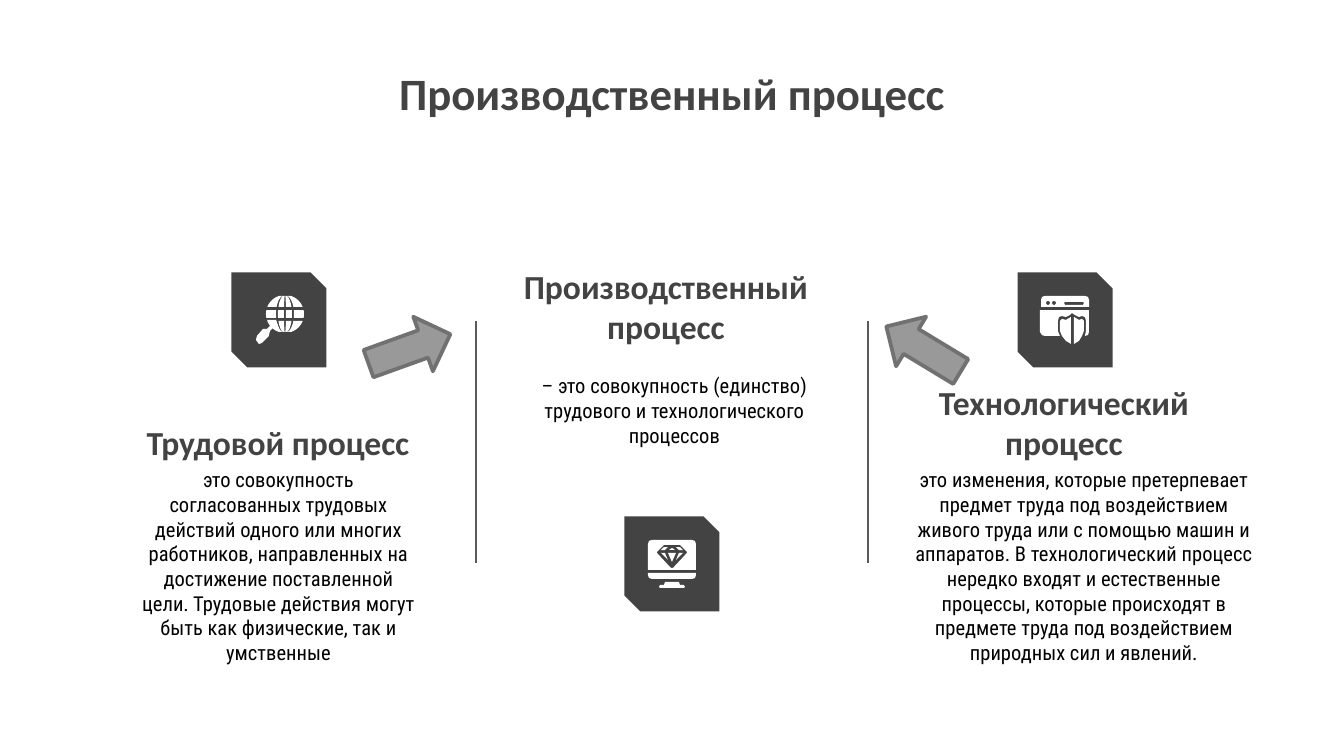
import math
from dataclasses import dataclass

import pptx
import pptx.dml.color
import pptx.enum.shapes
import pptx.enum.text
import pptx.util
from lxml import etree

SHAPE = pptx.enum.shapes.MSO_SHAPE
ANCHOR = pptx.enum.text.MSO_ANCHOR


@dataclass(frozen=True)
class Theme:
    dark: str = "434343"
    body: str = "000000"
    white: str = "FFFFFF"
    divider: str = "595959"
    arrow: str = "999999"
    arrow_edge: str = "717171"
    heading_font: str = "Calibri"
    body_font: str = "Roboto Condensed"
    title_size: int = 24
    heading_size: int = 18
    body_size: int = 11


THEME = Theme()

TITLE = "Производственный процесс"
TITLE_BOX = (289, 52, 766, 138)
HEADING_W, HEADING_H, BODY_H, TILE = 392, 63, 148, 95

# Heading and body positions are (left, top); tile positions are centres.
COLUMNS = [
    {
        "heading": "Трудовой процесс",
        "heading_at": (82, 413),
        "body": "это совокупность согласованных трудовых действий одного или многих "
                "работников, направленных на достижение поставленной цели. Трудовые "
                "действия могут быть как физические, так и умственные",
        "body_at": (128, 454), "body_w": 301,
        "tile_at": (279, 320), "icon": "globe",
    },
    {
        "heading": "Производственный процесс",
        "heading_at": (470, 297),
        "body": "– это совокупность (единство) трудового и технологического процессов",
        "body_at": (511, 360), "body_w": 327,
        "tile_at": (672, 564), "icon": "monitor",
    },
    {
        "heading": "Технологический процесс",
        "heading_at": (868, 413),
        "body": "это изменения, которые претерпевает предмет труда под воздействием "
                "живого труда или с помощью машин и аппаратов. В технологический процесс "
                "нередко входят и естественные процессы, которые происходят в предмете "
                "труда под воздействием природных сил и явлений.",
        "body_at": (902, 454), "body_w": 364,
        "tile_at": (1065, 320), "icon": "browser",
    },
]
DIVIDERS_X, DIVIDER_TOP, DIVIDER_BOTTOM = (476, 868), 321, 563
ARROWS = [((366, 320, 87, 58), 340.2), ((880, 320, 87, 58), 211.2)]


def mirrored(outline):
    return [(-x, y) for x, y in outline]


def circle(x, y, r):
    return [(x + r * math.cos(i * math.pi / 8), y + r * math.sin(i * math.pi / 8))
            for i in range(16)]


def globe_pieces(cx=6, cy=-6, radius=19):
    """Cells between meridians and parallels, as seen from the front."""
    def edge(half_width, ys):
        return [(cx + half_width * math.sqrt(1 - (y / radius) ** 2), cy + y) for y in ys]

    pieces = []
    for top, bottom in ((-18, -7), (-4, 4), (7, 18)):
        ys = [top + (bottom - top) * i / 8 for i in range(9)]
        for inner, outer in ((-19, -9), (-7, -1), (1, 7), (9, 19)):
            pieces.append([edge(inner, ys) + edge(outer, ys[::-1])])
    return pieces


# An icon is a list of pieces, a piece is an outline followed by its holes,
# all measured from the centre of the tile.
HANDLE = [(-12, 0), (-8, 5), (-12, 9), (-16, 9), (-22, 16), (-23, 20), (-20, 24),
          (-17, 23), (-10, 16), (-9, 11), (-6, 8), (1, 11), (-3, 0)]
GEM_SIDE = [[(-8, -17), (-11, -14), (-7, -14), (-4, -17)], [(-11, -11), (-4, -4), (-7, -11)]]
ICONS = {
    "globe": globe_pieces() + [[HANDLE]],
    "monitor": [
        [[(-20, -24), (20, -24), (23, -23), (24, -20), (24, 6), (-24, 6), (-24, -20), (-23, -23)],
         [(8, -19), (15, -12), (15, -11), (1, 4), (-1, 4), (-15, -11), (-15, -12), (-8, -19)]],
        [[(-24, 9), (24, 9), (24, 11), (23, 14), (20, 15), (-20, 15), (-23, 14), (-24, 11)]],
        [[(-7, 18), (-8, 21), (-12, 21), (-13, 23), (-12, 24), (12, 24), (13, 23), (12, 21),
          (8, 21), (7, 18)]],
        [[(0, -16), (-3, -14), (3, -14)]],
        [[(-4, -11), (0, -2), (4, -11)]],
    ] + [[side] for outline in GEM_SIDE for side in (outline, mirrored(outline))],
    "browser": [
        [[(-20, -24), (20, -24), (23, -23), (24, -20), (24, -13), (-24, -13), (-24, -20),
          (-23, -23)],
         circle(-17, -17, 2), circle(-11, -17, 2),
         [(0, -18), (18, -18), (19, -17), (18, -15), (0, -15), (-1, -17)]],
        [[(-25, -10), (-25, 12), (-23, 15), (-20, 16), (-5, 16), (-7, 11), (-7, 1), (-6, -3),
          (-3, -4), (1, -3), (5, -5), (7, -7), (10, -5), (14, -3), (17, -4), (20, -3),
          (21, 1), (21, 11), (20, 16), (23, 15), (24, 12), (24, -10)]],
        [[(6, -3), (1, 0), (-3, -1), (-5, 1), (-5, 11), (-3, 16), (1, 21), (6, 24)]],
        [[(9, -3), (14, 0), (17, -1), (19, 1), (19, 11), (17, 16), (14, 21), (9, 24)]],
    ],
}


def px(length):
    return pptx.util.Emu(round(length * 914400 / 134.4))


def rgb(colour):
    return pptx.dml.color.RGBColor.from_string(colour)


def paint(shape, fill, edge=None):
    shape.shadow.inherit = False
    shape.fill.solid()
    shape.fill.fore_color.rgb = rgb(fill)
    if edge:
        shape.line.color.rgb = rgb(edge)
        shape.line.width = pptx.util.Pt(2)
    else:
        shape.line.fill.background()


def add_text(slide, box, text, font, size, colour, bold=False, anchor=ANCHOR.TOP):
    frame = slide.shapes.add_textbox(*map(px, box)).text_frame
    frame.word_wrap = True
    frame.vertical_anchor = anchor
    frame.margin_left = frame.margin_right = pptx.util.Inches(0.1)
    frame.margin_top = frame.margin_bottom = pptx.util.Inches(0.1)
    paragraph = frame.paragraphs[0]
    paragraph.alignment = pptx.enum.text.PP_ALIGN.CENTER
    run = paragraph.add_run()
    run.text = text
    run.font.name = font
    run.font.size = pptx.util.Pt(size)
    run.font.bold = bold
    run.font.color.rgb = rgb(colour)


def add_divider(slide, x):
    divider = slide.shapes.add_connector(
        pptx.enum.shapes.MSO_CONNECTOR.STRAIGHT,
        px(x), px(DIVIDER_TOP), px(x), px(DIVIDER_BOTTOM))
    divider.line.color.rgb = rgb(THEME.divider)
    divider.line.width = pptx.util.Pt(0.75)
    etree.SubElement(divider.line._get_or_add_ln().getparent(),
                     pptx.oxml.ns.qn("a:effectLst"))


def add_icon(slide, centre, pieces):
    cx, cy = centre
    tile = slide.shapes.add_shape(SHAPE.SNIP_2_DIAG_RECTANGLE, px(cx - TILE / 2),
                                  px(cy - TILE / 2), px(TILE), px(TILE))
    paint(tile, THEME.dark)
    group = slide.shapes.add_group_shape()
    for piece in pieces:
        outlines = [[(px(cx + x), px(cy + y)) for x, y in outline] for outline in piece]
        builder = group.shapes.build_freeform(*outlines[0][0])
        builder.add_line_segments(outlines[0][1:])
        for hole in outlines[1:]:
            builder.move_to(*hole[0])
            builder.add_line_segments(hole[1:])
        paint(builder.convert_to_shape(), THEME.white)


def main():
    deck = pptx.Presentation()
    deck.slide_width, deck.slide_height = px(1344), px(756)
    slide = deck.slides.add_slide(deck.slide_layouts[6])

    add_text(slide, TITLE_BOX, TITLE, THEME.heading_font, THEME.title_size, THEME.dark, True)
    for column in COLUMNS:
        add_text(slide, (*column["heading_at"], HEADING_W, HEADING_H), column["heading"],
                 THEME.heading_font, THEME.heading_size, THEME.dark, True, ANCHOR.BOTTOM)
        add_text(slide, (*column["body_at"], column["body_w"], BODY_H), column["body"],
                 THEME.body_font, THEME.body_size, THEME.body)
    for x in DIVIDERS_X:
        add_divider(slide, x)
    for column in COLUMNS:
        add_icon(slide, column["tile_at"], ICONS[column["icon"]])
    for box, angle in ARROWS:
        arrow = slide.shapes.add_shape(SHAPE.RIGHT_ARROW, *map(px, box))
        arrow.rotation = angle
        paint(arrow, THEME.arrow, THEME.arrow_edge)

    deck.save("out.pptx")


if __name__ == "__main__":
    main()
